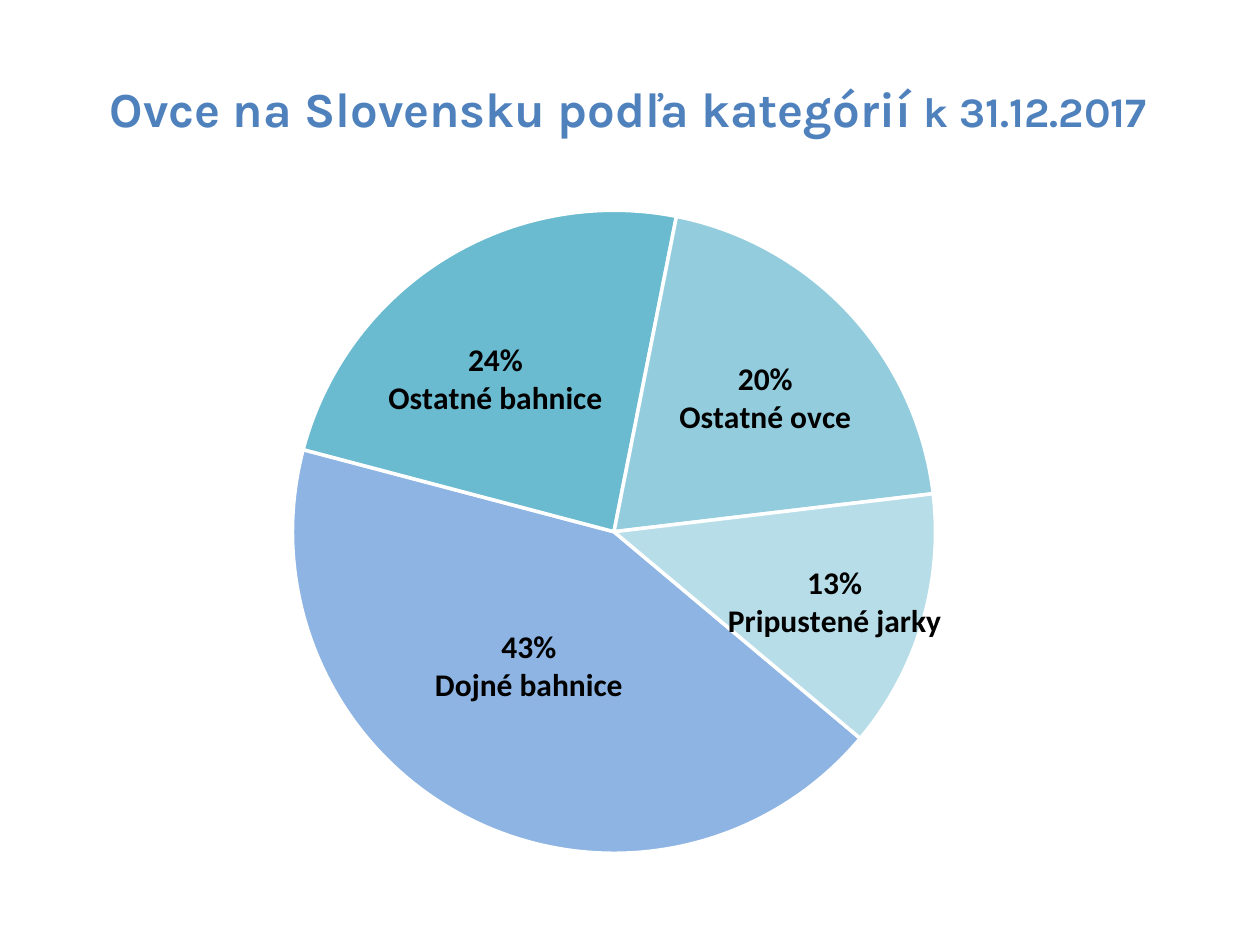
import lxml.etree
import pptx
import pptx.chart.data
import pptx.dml.color
import pptx.enum.chart
import pptx.enum.text
import pptx.oxml
import pptx.oxml.ns
import pptx.util
from pptx.util import Cm

TITLE_BLUE = pptx.dml.color.RGBColor(0x4F, 0x81, 0xBD)
WHITE = pptx.dml.color.RGBColor(0xFF, 0xFF, 0xFF)
BLACK = pptx.dml.color.RGBColor(0x00, 0x00, 0x00)
PERIWINKLE = pptx.dml.color.RGBColor(0x8E, 0xB4, 0xE3)
TEAL = pptx.dml.color.RGBColor(0x6A, 0xBA, 0xD0)
AQUA = pptx.dml.color.RGBColor(0x93, 0xCD, 0xDD)
PALE_AQUA = pptx.dml.color.RGBColor(0xB7, 0xDE, 0xE8)

# Category, percent, fill, label shift as a share of the chart's size
SHEEP = [
    ("Dojné bahnice", 43, PERIWINKLE, (-0.01, -0.01)),
    ("Ostatné bahnice", 24, TEAL, (-0.03, -0.02)),
    ("Ostatné ovce", 20, AQUA, (0.03, -0.03)),
    ("Pripustené jarky", 13, PALE_AQUA, (0.06, 0.03)),
]


def add_run(paragraph, text, *, font, size, color, bold=True):
    run = paragraph.add_run()
    run.text = text
    run.font.name = font
    run.font.size = pptx.util.Pt(size)
    run.font.bold = bold
    run.font.color.rgb = color


def manual_layout(**values):
    """Return a c:layout element holding the given manual layout values."""
    qualified = pptx.oxml.ns.qn
    layout = lxml.etree.Element(qualified("c:layout"))
    manual = lxml.etree.SubElement(layout, qualified("c:manualLayout"))
    for name, value in values.items():
        lxml.etree.SubElement(manual, qualified(f"c:{name}"), val=str(value))
    return layout


class SlideBuilder:
    title_font = "Karla"
    chart_font = "Calibri"
    label_size = 18

    def __init__(self, presentation):
        self.slide = presentation.slides.add_slide(presentation.slide_layouts[6])

    def add_title(self, parts, left, top, width, height):
        """Add a centred title from (text, size) parts."""
        box = self.slide.shapes.add_textbox(left, top, width, height)
        frame = box.text_frame
        frame.word_wrap = True
        frame.auto_size = pptx.enum.text.MSO_AUTO_SIZE.SHAPE_TO_FIT_TEXT
        paragraph = frame.paragraphs[0]
        paragraph.alignment = pptx.enum.text.PP_ALIGN.CENTER
        for text, size in parts:
            add_run(paragraph, text, font=self.title_font, size=size, color=TITLE_BLUE)

    def add_pie(self, slices, left, top, width, height):
        data = pptx.chart.data.CategoryChartData()
        data.categories = [name for name, *_ in slices]
        data.add_series("Ovce", [percent for _, percent, *_ in slices])
        chart = self.slide.shapes.add_chart(
            pptx.enum.chart.XL_CHART_TYPE.PIE, left, top, width, height, data
        ).chart
        chart.has_title = False
        chart.has_legend = False
        chart.font.name = self.chart_font
        chart.font.size = pptx.util.Pt(self.label_size)
        chart.font.color.rgb = BLACK

        plot = chart.plots[0]
        plot.vary_by_categories = True
        plot_area = chart.element.find(".//" + pptx.oxml.ns.qn("c:plotArea"))
        for old_layout in plot_area.findall(pptx.oxml.ns.qn("c:layout")):
            plot_area.remove(old_layout)
        plot_area.insert(0, manual_layout(
            layoutTarget="inner", xMode="edge", yMode="edge",
            x=0.03, y=0.17, w=0.68, h=0.79))
        pie = plot_area.find(pptx.oxml.ns.qn("c:pieChart"))
        angle = pie.find(pptx.oxml.ns.qn("c:firstSliceAng"))
        if angle is None:
            angle = lxml.etree.SubElement(pie, pptx.oxml.ns.qn("c:firstSliceAng"))
        angle.set("val", "130")

        for index, (name, percent, color, shift) in enumerate(slices):
            point = plot.series[0].points[index]
            point.format.fill.solid()
            point.format.fill.fore_color.rgb = color
            point.format.line.color.rgb = WHITE
            point.format.line.width = pptx.util.Pt(2)
            self.label_point(point, index, (f"{percent}%", name), shift)

    def label_point(self, point, index, lines, shift):
        label = point.data_label
        frame = label.text_frame
        for number, line in enumerate(lines):
            paragraph = frame.add_paragraph() if number else frame.paragraphs[0]
            add_run(paragraph, line, font=self.chart_font, size=self.label_size, color=BLACK)
        label.position = pptx.enum.chart.XL_LABEL_POSITION.CENTER
        body = frame._txBody
        label_element = body.getparent().getparent()
        label_element.insert(1, manual_layout(x=shift[0], y=shift[1]))


def main():
    presentation = pptx.Presentation()
    presentation.slide_width = Cm(25.4)
    presentation.slide_height = Cm(19.05)
    builder = SlideBuilder(presentation)
    builder.add_pie(SHEEP, Cm(4.09), Cm(1.45), Cm(22.4), Cm(16.41))
    builder.add_title(
        [("Ovce na Slovensku podľa kategórií ", 28), ("k 31.12.2017", 24)],
        Cm(0.36), Cm(1.45), Cm(24.61), Cm(1.45))
    presentation.save("out.pptx")


if __name__ == "__main__":
    main()
